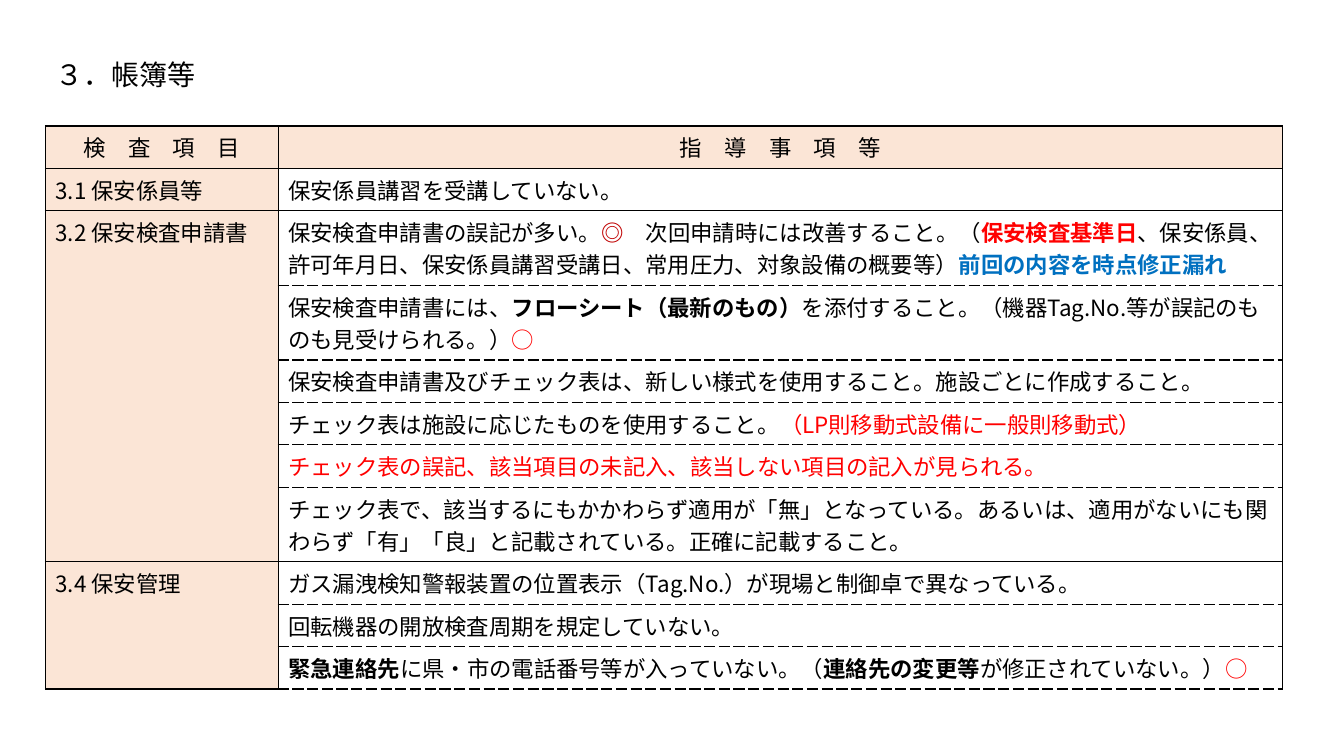
from lxml.etree import SubElement
from pptx import Presentation
from pptx.dml.color import RGBColor
from pptx.enum.text import MSO_ANCHOR, PP_ALIGN
from pptx.oxml.ns import qn
from pptx.util import Inches, Pt

FONT = "Noto Sans CJK JP"
BLACK, RED, DARK_RED, BLUE, PEACH = "000000", "FF0000", "C00000", "0070C0", "FBE5D6"


def add_text(paragraph, text, size, color=BLACK, bold=False):
    run = paragraph.add_run()
    run.text = text
    run.font.size = Pt(size)
    run.font.bold = bold
    run.font.name = FONT
    run.font.color.rgb = RGBColor.from_string(color)
    SubElement(run.font._element, qn("a:ea"), typeface=FONT)


def add_border(cell, side, dash):
    properties = cell._tc.get_or_add_tcPr()
    line = SubElement(properties, qn(f"a:ln{side}"), w=str(Pt(1)))
    fill = SubElement(line, qn("a:solidFill"))
    SubElement(fill, qn("a:srgbClr"), val=BLACK)
    SubElement(line, qn("a:prstDash"), val=dash)


# Each section: inspection item, then its guidance rows as (text, color, bold) runs
sections = [
    ("検　査　項　目", [[("指　導　事　項　等",)]]),
    ("3.1 保安係員等", [[("保安係員講習を受講していない。",)]]),
    ("3.2 保安検査申請書", [
        [("保安検査申請書の誤記が多い。",),
         ("◎　", DARK_RED, True),
         ("次回申請時には改善すること。（",),
         ("保安検査基準日", RED, True),
         ("、保安係員、許可年月日、保安係員講習受講日、常用圧力、対象設備の概要等）",),
         ("前回の内容を時点修正漏れ", BLUE, True)],
        [("保安検査申請書には、",),
         ("フローシート（最新のもの）", BLACK, True),
         ("を添付すること。（機器Tag.No.等が誤記のものも見受けられる。）",),
         ("○", RED)],
        [("保安検査申請書及びチェック表は、新しい様式を使用すること。施設ごとに作成すること。",)],
        [("チェック表は施設に応じたものを使用すること。",),
         ("（LP則移動式設備に一般則移動式）", RED)],
        [("チェック表の誤記、該当項目の未記入、該当しない項目の記入が見られる。", RED)],
        [("チェック表で、該当するにもかかわらず適用が「無」となっている。"
          "あるいは、適用がないにも関わらず「有」「良」と記載されている。正確に記載すること。",)],
    ]),
    ("3.4 保安管理", [
        [("ガス漏洩検知警報装置の位置表示（Tag.No.）が現場と制御卓で異なっている。",)],
        [("回転機器の開放検査周期を規定していない。",)],
        [("緊急連絡先", BLACK, True),
         ("に県・市の電話番号等が入っていない。（",),
         ("連絡先の変更等", BLACK, True),
         ("が修正されていない。）",),
         ("○", RED)],
    ]),
]
two_line_rows = {2, 3, 7}
row_count = sum(len(guidance) for item, guidance in sections)

presentation = Presentation()
presentation.slide_width = Inches(13.33)
presentation.slide_height = Inches(7.5)
slide = presentation.slides.add_slide(presentation.slide_layouts[5])

# Title
title = slide.shapes.title
title.left, title.top = Inches(0.45), Inches(0.54)
title.width, title.height = Inches(2.92), Inches(0.39)
title.text_frame.vertical_anchor = MSO_ANCHOR.MIDDLE
title.text_frame.paragraphs[0].alignment = PP_ALIGN.LEFT
add_text(title.text_frame.paragraphs[0], "３．帳簿等", 20)

# Table grid
table = slide.shapes.add_table(row_count, 2, Inches(0.45), Inches(1.25),
                               Inches(12.27), Inches(5.58)).table
table.horz_banding = False
table.columns[0].width, table.columns[1].width = Inches(2.31), Inches(9.96)
for index, row in enumerate(table.rows):
    row.height = Inches(0.74 if index in two_line_rows else 0.42)

# Sections: dashed lines separate the guidance rows within one item
row_index = 0
for item, guidance in sections:
    first_row, last_row = row_index, row_index + len(guidance) - 1
    add_text(table.cell(first_row, 0).text_frame.paragraphs[0], item, 16)
    for runs in guidance:
        item_cell, guidance_cell = table.cell(row_index, 0), table.cell(row_index, 1)
        for run in runs:
            add_text(guidance_cell.text_frame.paragraphs[0], run[0], 16, *run[1:])
        top_dash = "solid" if row_index == first_row else "sysDash"
        is_solid_bottom = row_index == last_row and row_index < row_count - 1
        bottom_dash = "solid" if is_solid_bottom else "sysDash"
        for side, dash in zip("LRTB", ("solid", "solid", top_dash, bottom_dash)):
            add_border(item_cell, side, "solid")
            add_border(guidance_cell, side, dash)
        item_cell.fill.solid()
        item_cell.fill.fore_color.rgb = RGBColor.from_string(PEACH)
        guidance_cell.fill.background()
        row_index += 1
    if last_row > first_row:
        table.cell(first_row, 0).merge(table.cell(last_row, 0))

# Header row
for cell in table.rows[0].cells:
    cell.text_frame.paragraphs[0].alignment = PP_ALIGN.CENTER
    cell.fill.solid()
    cell.fill.fore_color.rgb = RGBColor.from_string(PEACH)

presentation.save("out.pptx")
